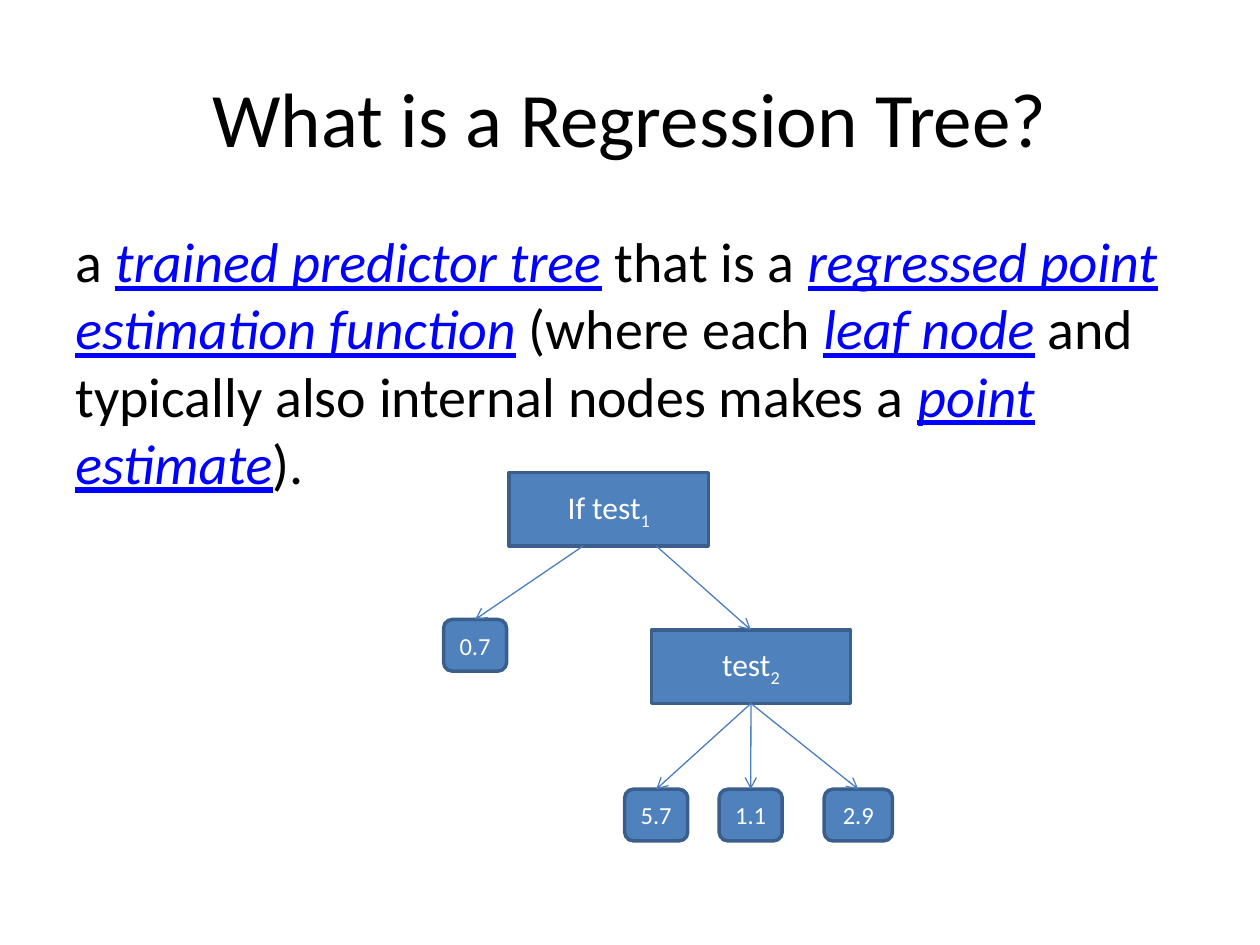
from pptx import Presentation
from pptx.dml.color import RGBColor
from pptx.enum.shapes import MSO_CONNECTOR as CONN, MSO_SHAPE as SHAPE
from pptx.enum.text import MSO_ANCHOR as ANCHOR, PP_ALIGN as ALIGN
from pptx.oxml.ns import qn
from pptx.util import Pt
from lxml.etree import SubElement

BLACK = RGBColor(0x00, 0x00, 0x00)
WHITE = RGBColor(0xFF, 0xFF, 0xFF)
LINK = RGBColor(0x00, 0x00, 0xFF)
NODE_FILL = RGBColor(0x4F, 0x81, 0xBD)
NODE_LINE = RGBColor(0x3A, 0x5F, 0x8C)
EDGE = RGBColor(0x4B, 0x7E, 0xBC)

TITLE = [("What is a Regression Tree?", "")]
DEFINITION = [
    ("a ", ""), ("trained predictor tree", "term"),
    (" that is a ", ""), ("regressed point estimation function", "term"),
    (" (where each ", ""), ("leaf node", "term"),
    (" and typically also internal nodes makes a ", ""),
    ("point estimate", "term"), (").", ""),
]

TEST_SIZE = (113.75, 42)
LEAF_H = 29.5
TESTS = {
    "root": ([("If test", ""), ("1", "sub")], 291, 270),
    "inner": ([("test", ""), ("2", "sub")], 372.25, 360),
}
LEAVES = [
    ("0.7", 253.5, 354, 36),
    ("5.7", 357, 451, 36),
    ("1.1", 411, 451, 36),
    ("2.9", 471, 451, 39),
]
ROOT_EDGES = [("0.7", 333.25), ("inner", 375)]
INNER_EDGES = ["2.9", "1.1", "5.7"]
TOP, BOTTOM = 0, 2


def write(shape, runs, size, color=WHITE, align=ALIGN.CENTER,
          anchor=ANCHOR.MIDDLE, before=0):
    tf = shape.text_frame
    tf.word_wrap = True
    tf.vertical_anchor = anchor
    p = tf.paragraphs[0]
    p.alignment = align
    p.space_before = Pt(before)
    for text, style in runs:
        r = p.add_run()
        r.text = text
        r.font.name = "Calibri"
        r.font.size = Pt(size)
        r.font.color.rgb = LINK if style == "term" else color
        if style == "term":
            r.font.italic = r.font.underline = True
        elif style == "sub":
            r.font._element.set("baseline", "-25000")


def add_node(s, kind, runs, box, size):
    sp = s.shapes.add_shape(kind, *map(Pt, box))
    sp.shadow.inherit = False
    sp.fill.solid()
    sp.fill.fore_color.rgb = NODE_FILL
    sp.line.color.rgb = NODE_LINE
    sp.line.width = Pt(2)
    write(sp, runs, size)
    return sp


def add_arrow(s, parent, child, start_x=None):
    x = parent.left + parent.width // 2 if start_x is None else Pt(start_x)
    c = s.shapes.add_connector(CONN.STRAIGHT, x, parent.top + parent.height,
                               child.left + child.width // 2, child.top)
    if start_x is None:
        c.begin_connect(parent, BOTTOM)
    c.end_connect(child, TOP)
    c.line.color.rgb = EDGE
    c.line.width = Pt(0.75)
    SubElement(c.line._get_or_add_ln(), qn("a:tailEnd"), type="arrow")
    SubElement(c._element.spPr, qn("a:effectLst"))


def main():
    prs = Presentation()
    prs.slide_width, prs.slide_height = Pt(720), Pt(540)
    s = prs.slides.add_slide(prs.slide_layouts[6])

    title = s.shapes.add_textbox(Pt(36), Pt(21.6), Pt(648), Pt(90))
    write(title, TITLE, 44, color=BLACK)
    body = s.shapes.add_textbox(Pt(36), Pt(126), Pt(648), Pt(356.4))
    write(body, DEFINITION, 32, color=BLACK, align=ALIGN.LEFT,
          anchor=ANCHOR.TOP, before=6.4)

    nodes = {}
    for name, (runs, x, y) in TESTS.items():
        nodes[name] = add_node(s, SHAPE.RECTANGLE, runs, (x, y, *TEST_SIZE), 18)
    for value, x, y, w in LEAVES:
        nodes[value] = add_node(s, SHAPE.ROUNDED_RECTANGLE, [(value, "")],
                                (x, y, w, LEAF_H), 14)

    for child, start_x in ROOT_EDGES:
        add_arrow(s, nodes["root"], nodes[child], start_x)
    for child in INNER_EDGES:
        add_arrow(s, nodes["inner"], nodes[child])

    prs.save("out.pptx")


if __name__ == "__main__":
    main()
